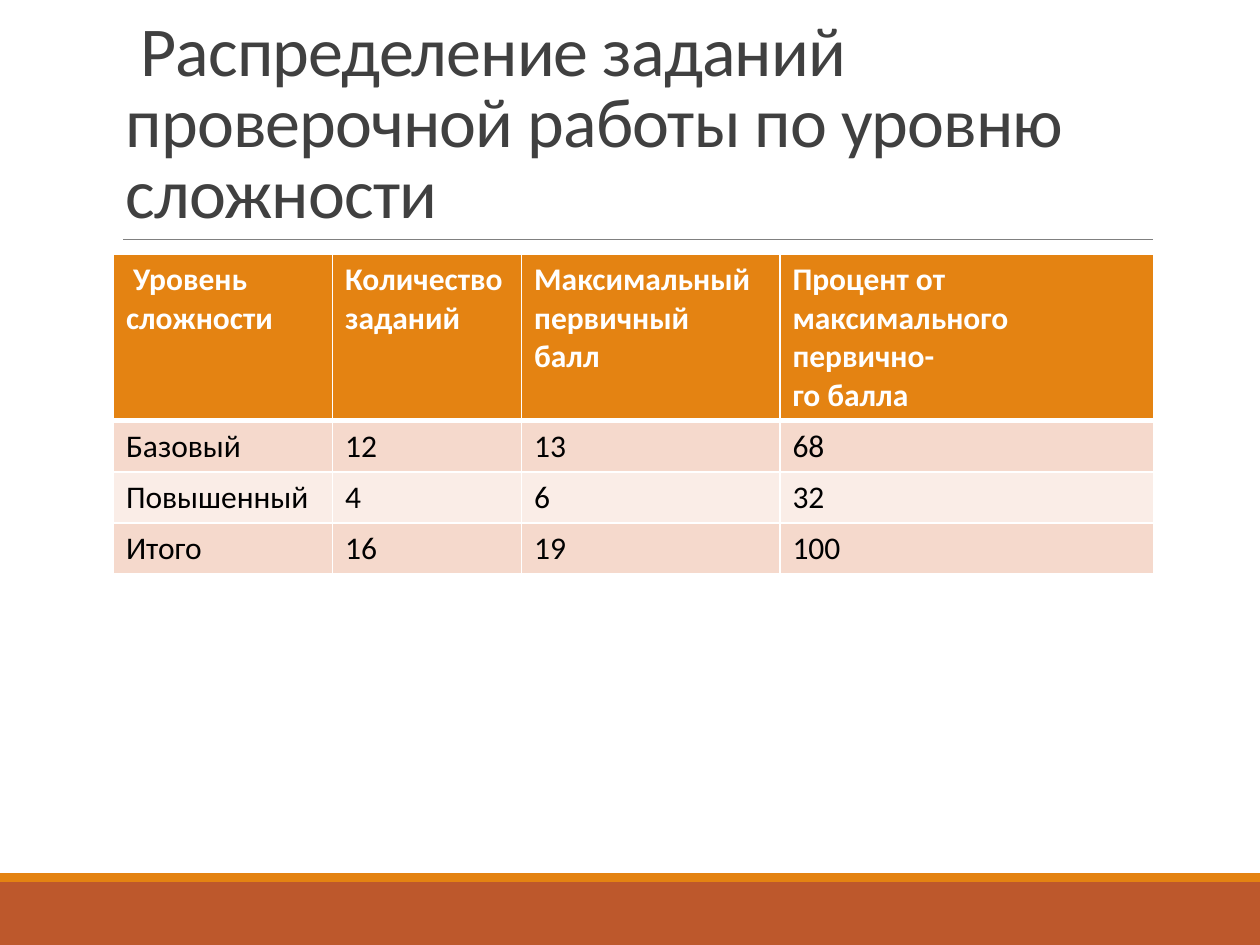
"""Builds a slide with a table of test tasks by difficulty level."""
from dataclasses import dataclass

from lxml import etree
from pptx import Presentation
from pptx.dml.color import RGBColor
from pptx.enum.shapes import MSO_CONNECTOR, MSO_SHAPE
from pptx.enum.text import MSO_ANCHOR
from pptx.oxml.ns import qn
from pptx.util import Inches, Pt

RECTANGLE = MSO_SHAPE.RECTANGLE
STRAIGHT = MSO_CONNECTOR.STRAIGHT
BOTTOM = MSO_ANCHOR.BOTTOM

GRID_COLUMNS, GRID_ROWS = 100, 75
PAGE_WIDTH, PAGE_HEIGHT = Inches(10), Inches(7.5)

COLORS = {
    "band": "BD582C",
    "accent": "E48312",
    "rule": "808080",
    "title": "404040",
    "white": "FFFFFF",
    "black": "000000",
    "odd_row": "F5D9CC",
    "even_row": "FAEDE7",
}
FORMATS = {
    "title": {"name": "Calibri", "size": Pt(40), "bold": False},
    "header": {"name": "Calibri", "size": Pt(18), "bold": True},
    "body": {"name": "Calibri", "size": Pt(18), "bold": False},
}
TITLE = " Распределение заданий проверочной работы по уровню сложности"
LEVELS = [
    [" Уровень сложности", "Количество\nзаданий", "Максимальный\nпервичный\nбалл",
     "Процент от максимального первично-\nго балла"],
    ["Базовый", "12", "13", "68"],
    ["Повышенный", "4", "6", "32"],
    ["Итого", "16", "19", "100"],
]
COLUMN_WIDTHS = [17.4, 15, 20.5, 29.7]
HEADER_HEIGHT, BODY_HEIGHT = 13.2, 4.05
THIN, THICK = 1, 3


@dataclass(frozen=True)
class Frame:
    """A place on the page in grid columns and rows."""
    left: float
    top: float
    width: float
    height: float

    def lengths(self) -> tuple:
        """Return the left, top, width and height as slide lengths."""
        return across(self.left), down(self.top), across(self.width), down(self.height)


@dataclass(frozen=True)
class Band:
    """A filled strip at the foot of the page."""
    frame: Frame
    color: str


BANDS = [
    Band(Frame(0, 70, GRID_COLUMNS, 5), "band"),
    Band(Frame(0, 69.3, GRID_COLUMNS, 0.7), "accent"),
]
TITLE_FRAME = Frame(9, 3.1, 82.5, 15.9)
RULE_FRAME = Frame(9.8, 19, 81.7, 0)
TABLE_FRAME = Frame(9, 20.2, sum(COLUMN_WIDTHS),
                    HEADER_HEIGHT + BODY_HEIGHT * (len(LEVELS) - 1))


def across(columns: float) -> int:
    """Turn grid columns into a slide length."""
    return round(PAGE_WIDTH * columns / GRID_COLUMNS)


def down(rows: float) -> int:
    """Turn grid rows into a slide length."""
    return round(PAGE_HEIGHT * rows / GRID_ROWS)


def color(name: str) -> RGBColor:
    """Look up a named colour."""
    return RGBColor.from_string(COLORS[name])


def style(font, format_name: str, color_name: str) -> None:
    """Apply a format and a colour to a font."""
    for attribute, value in FORMATS[format_name].items():
        setattr(font, attribute, value)
    font.color.rgb = color(color_name)


def draw_band(page, band: Band) -> None:
    """Draw one filled strip."""
    shape = page.shapes.add_shape(RECTANGLE, *band.frame.lengths())
    shape.shadow.inherit = False
    shape.fill.solid()
    shape.fill.fore_color.rgb = color(band.color)
    shape.line.fill.background()


def draw_rule(page, frame: Frame) -> None:
    """Draw the thin line under the title."""
    left, top, width, height = frame.lengths()
    rule = page.shapes.add_connector(STRAIGHT, left, top, left + width, top + height)
    rule.line.color.rgb = color("rule")
    rule.line.width = Pt(0.5)
    etree.SubElement(rule.element.spPr, qn("a:effectLst"))


def draw_title(page, frame: Frame) -> None:
    """Draw the heading with tight line and letter spacing."""
    box = page.shapes.add_textbox(*frame.lengths())
    box.text_frame.word_wrap = True
    box.text_frame.vertical_anchor = BOTTOM
    para = box.text_frame.paragraphs[0]
    para.line_spacing = 0.85
    span = para.add_run()
    span.text = TITLE
    style(span.font, "title", "title")
    span.font._element.set("spc", "-50")


def draw_borders(cell, top: float, bottom: float) -> None:
    """Give a cell white borders of the stated widths in points."""
    properties = cell._tc.get_or_add_tcPr()
    for side, width in {"L": THIN, "R": THIN, "T": top, "B": bottom}.items():
        line = etree.SubElement(properties, qn(f"a:ln{side}"), w=str(Pt(width)))
        fill = etree.SubElement(line, qn("a:solidFill"))
        etree.SubElement(fill, qn("a:srgbClr"), val=COLORS["white"])


def fill_cell(cell, text: str, row: int) -> None:
    """Write and format a cell according to its row."""
    header = row == 0
    draw_borders(cell, THICK if row == 1 else THIN, THICK if header else THIN)
    cell.fill.solid()
    shade = "accent" if header else "odd_row" if row % 2 else "even_row"
    cell.fill.fore_color.rgb = color(shade)
    cell.text = text
    for para in cell.text_frame.paragraphs:
        for span in para.runs:
            style(span.font, "header" if header else "body",
                  "white" if header else "black")


def draw_table(page, frame: Frame) -> None:
    """Draw the table of difficulty levels."""
    table = page.shapes.add_table(
        len(LEVELS), len(COLUMN_WIDTHS), *frame.lengths()).table
    for column, width in zip(table.columns, COLUMN_WIDTHS):
        column.width = across(width)
    for row, texts in enumerate(LEVELS):
        table.rows[row].height = down(BODY_HEIGHT if row else HEADER_HEIGHT)
        for column, text in enumerate(texts):
            fill_cell(table.cell(row, column), text, row)


def main() -> None:
    """Build and save the deck."""
    deck = Presentation()
    deck.slide_width, deck.slide_height = PAGE_WIDTH, PAGE_HEIGHT
    page = deck.slides.add_slide(deck.slide_layouts[6])
    for band in BANDS:
        draw_band(page, band)
    draw_rule(page, RULE_FRAME)
    draw_title(page, TITLE_FRAME)
    draw_table(page, TABLE_FRAME)
    deck.save("out.pptx")


if __name__ == "__main__":
    main()
